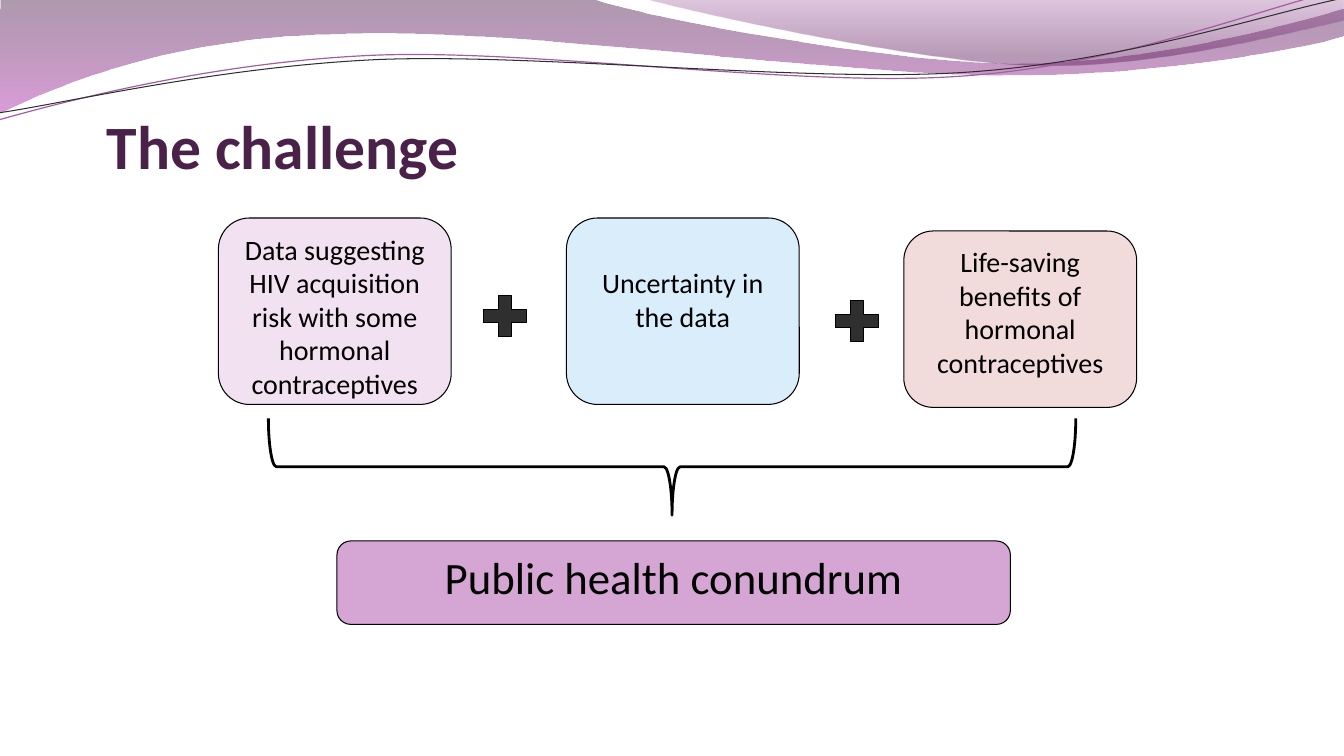
from dataclasses import dataclass
from math import cos, radians, sin

from lxml.etree import SubElement
from pptx import Presentation
from pptx.dml.color import RGBColor
from pptx.enum.shapes import MSO_SHAPE
from pptx.enum.text import MSO_ANCHOR, PP_ALIGN
from pptx.oxml import parse_xml
from pptx.oxml.ns import nsdecls, qn
from pptx.util import Pt

BLACK, CHARCOAL, PLUM = "000000", "2F2F2F", "4A2249"
STRAND_TILT = -2.7

# A wave path lists segments: one point is a straight line, three a Bézier curve.
BACK_WAVE = [
    [(0, 0)], [(422.6, -0.7)],
    [(456.5, 12.2), (636.5, 45.4), (727.9, 45.4)],
    [(818.6, 45.4), (919.4, 18.7), (959.8, 6.5)],
    [(960.5, 25.9)],
    [(944.6, 31.7), (834.5, 54.7), (715.7, 54)],
    [(596.9, 54), (366.5, 20.2), (247, 24.5)],
    [(123.8, 25.9), (43.9, 59.8), (-1.4, 81.4)],
]
FRONT_WAVE = [
    [(459.4, -0.7)],
    [(488.9, 7.9), (654.5, 44.6), (738, 46.8)],
    [(820.8, 49.7), (923, 23), (959.8, 15.1)],
    [(959.8, 0)],
]
PURPLE_STRAND = [
    [(-0.7, 85.7)],
    [(45.4, 72.7), (151.2, 44.6), (265.7, 39.6)],
    [(379.4, 34.6), (568.1, 62.6), (683.3, 54.7)],
    [(799.2, 47.5), (900.7, 5.8), (957.6, -7.2)],
]
DARK_STRAND = [
    [(-0.7, 80.6)],
    [(44.6, 74.2), (157, 47.5), (271.4, 42.5)],
    [(386.6, 38.2), (573.1, 59), (687.6, 51.8)],
    [(802.1, 44.6), (903.6, 10.1), (959.8, -1.4)],
]


@dataclass
class Box:
    left: float
    top: float
    width: float
    height: float

    def lengths(self):
        return [Pt(value) for value in (self.left, self.top, self.width, self.height)]

    def inner(self, left, top, width, height):
        return Box(self.left + left, self.top + top, width, height)


def color(hex_value):
    return RGBColor.from_string(hex_value)


def set_values(target, values):
    for name, value in values.items():
        setattr(target, name, value)


def style_shape(shape, fill=None, line=None, line_width=0.75):
    shape.shadow.inherit = False
    if fill:
        shape.fill.solid()
        shape.fill.fore_color.rgb = color(fill)
    else:
        shape.fill.background()
    if line:
        shape.line.color.rgb = color(line)
        shape.line.width = Pt(line_width)
    else:
        shape.line.fill.background()


def write_text(shape, text, size, ink=BLACK, bold=False, align=PP_ALIGN.CENTER, **frame_format):
    frame = shape.text_frame
    set_values(frame, {"word_wrap": True, "vertical_anchor": MSO_ANCHOR.TOP, **frame_format})
    paragraph = frame.paragraphs[0]
    paragraph.text = text
    paragraph.alignment = align
    set_values(paragraph.font, {"name": "Calibri", "size": Pt(size), "bold": bold})
    paragraph.font.color.rgb = color(ink)


def rotate(point, center, degrees):
    dx, dy = point[0] - center[0], point[1] - center[1]
    cosine, sine = cos(radians(degrees)), sin(radians(degrees))
    return center[0] + dx * cosine - dy * sine, center[1] + dx * sine + dy * cosine


def draw_path(slide, box, path, closed, tilt=0):
    """Draw the segments as one shape that is laid out level and then tilted."""
    center = (box.width / 2, box.height / 2)
    level = [rotate(point, center, -tilt) for segment in path for point in segment]
    points = [(Pt(box.left + x), Pt(box.top + y)) for x, y in level]
    builder = slide.shapes.build_freeform(*points[0])
    builder.add_line_segments(points[1:], close=closed)
    shape = builder.convert_to_shape()
    shape.rotation = tilt % 360

    outline = next(shape.element.iter(qn("a:path")))
    lines = iter(outline.findall(qn("a:lnTo")))
    for segment in path[1:]:
        parts = [next(lines) for _ in segment]
        if len(parts) == 3:
            curve = SubElement(outline, qn("a:cubicBezTo"))
            outline.replace(parts[0], curve)
            for part in parts:
                curve.append(part[0])
            for part in parts[1:]:
                outline.remove(part)
    return shape


def fill_gradient(shape, stops):
    """Replace the empty fill by a top-down gradient of (position, colour, opacity)."""
    stop_xml = "".join(
        f'<a:gs pos="{position * 1000}"><a:srgbClr val="{tint}">'
        f'<a:alpha val="{opacity * 1000}"/></a:srgbClr></a:gs>'
        for position, tint, opacity in stops)
    gradient = parse_xml(
        f'<a:gradFill {nsdecls("a")} rotWithShape="1"><a:gsLst>{stop_xml}</a:gsLst>'
        '<a:lin ang="5400000" scaled="0"/></a:gradFill>')
    properties = shape.element.spPr
    properties.replace(properties.find(qn("a:noFill")), gradient)


def add_waves(slide, box):
    for path, stops in (
        (BACK_WAVE, [(0, "4D1E4C", 45), (100, "BC4BBA", 55)]),
        (FRONT_WAVE, [(0, "924591", 30), (80, "611F5F", 45)]),
    ):
        wave = draw_path(slide, box, path, closed=True)
        style_shape(wave)
        fill_gradient(wave, stops)
    for path, ink, width in ((PURPLE_STRAND, "A35DA2", 0.85), (DARK_STRAND, CHARCOAL, 0.75)):
        strand = draw_path(slide, box, path, closed=False, tilt=STRAND_TILT)
        style_shape(strand, line=ink, line_width=width)


def add_title(slide, box):
    title = slide.shapes.add_textbox(*box.lengths())
    write_text(title, "The challenge", 44, PLUM, True, PP_ALIGN.LEFT,
               vertical_anchor=MSO_ANCHOR.BOTTOM, margin_left=0, margin_right=0,
               margin_top=Pt(3.6), margin_bottom=0)


def add_shape(slide, kind, box, **style):
    shape = slide.shapes.add_shape(kind, *box.lengths())
    style_shape(shape, **style)
    return shape


def add_factors(slide, box):
    """Three cards joined by plus signs."""
    for left, top, height, fill, margin_top, text in (
        (0, 0, 133.2, "F1E1F1", 3.6,
         "Data suggesting HIV acquisition risk with some hormonal contraceptives"),
        (248.6, 0, 133.2, "DAEDFB", 27.6, "Uncertainty in the data"),
        (489.6, 9.3, 126, "F2DCDB", 3.6, "Life-saving benefits of hormonal contraceptives"),
    ):
        card = add_shape(slide, MSO_SHAPE.ROUNDED_RECTANGLE,
                         box.inner(left, top, 166.3, height), fill=fill, line=BLACK)
        write_text(card, text, 20, margin_top=Pt(margin_top))
    for left, top in ((183.8, 50.4), (435.1, 53.8)):
        add_shape(slide, MSO_SHAPE.MATH_PLUS, box.inner(left, top, 41.8, 39.6),
                  fill=CHARCOAL, line=BLACK)


def add_brace(slide, box):
    """A left brace turned to point down, covering the box."""
    turned = box.inner((box.width - box.height) / 2, (box.height - box.width) / 2,
                       box.height, box.width)
    brace = add_shape(slide, MSO_SHAPE.LEFT_BRACE, turned, line=BLACK, line_width=2)
    brace.rotation = 270


def add_conclusion(slide, box):
    banner = add_shape(slide, MSO_SHAPE.ROUNDED_RECTANGLE, box, fill="D5A5D4", line=BLACK)
    write_text(banner, "Public health conundrum", 32)


def main():
    presentation = Presentation()
    set_values(presentation, {"slide_width": Pt(960), "slide_height": Pt(540)})
    slide = presentation.slides.add_slide(presentation.slide_layouts[6])
    add_waves(slide, Box(0, 0, 960, 84))
    add_title(slide, Box(76.3, 51.8, 617.8, 77.8))
    add_factors(slide, Box(156, 155.7, 655.9, 135.3))
    add_brace(slide, Box(191.7, 298.9, 576.7, 69.1))
    add_conclusion(slide, Box(240.7, 386.4, 481, 59.6))
    presentation.save("out.pptx")


if __name__ == "__main__":
    main()
